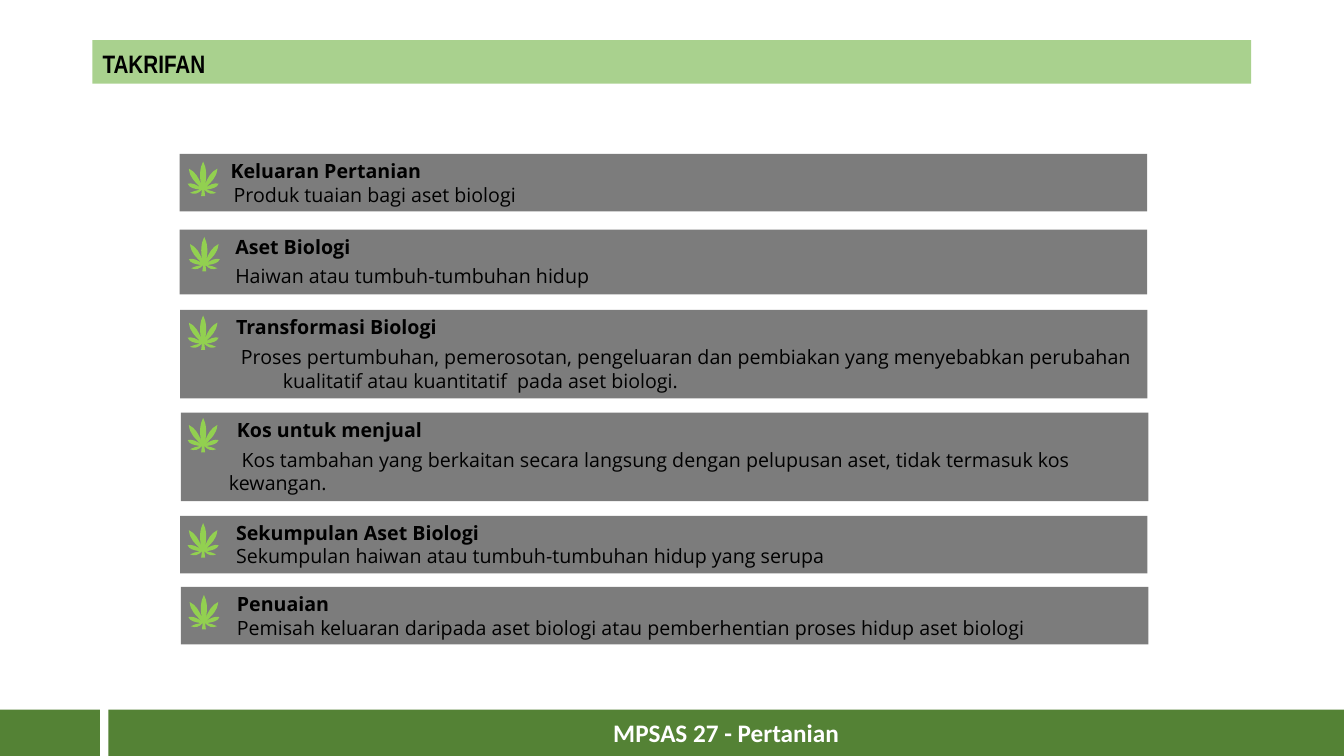
from dataclasses import dataclass

from lxml import etree
from pptx import Presentation
from pptx.dml.color import RGBColor
from pptx.enum.shapes import MSO_SHAPE
from pptx.enum.text import MSO_ANCHOR, MSO_AUTO_SIZE, PP_ALIGN
from pptx.oxml.ns import qn
from pptx.util import Cm, Pt

RECTANGLE = MSO_SHAPE.RECTANGLE
TOP, MIDDLE, BOTTOM = MSO_ANCHOR.TOP, MSO_ANCHOR.MIDDLE, MSO_ANCHOR.BOTTOM
LEFT, CENTER = PP_ALIGN.LEFT, PP_ALIGN.CENTER
NO_AUTOFIT = MSO_AUTO_SIZE.NONE


@dataclass(frozen=True)
class Theme:
    footer: RGBColor = RGBColor(0x54, 0x82, 0x35)
    banner: RGBColor = RGBColor(0xA9, 0xD1, 0x8E)
    bar: RGBColor = RGBColor(0x7C, 0x7C, 0x7C)
    leaf: RGBColor = RGBColor(0x92, 0xD0, 0x50)
    dark: RGBColor = RGBColor(0, 0, 0)
    light: RGBColor = RGBColor(255, 255, 255)
    title_font: str = "Arial Narrow"
    footer_font: str = "Calibri"
    body_font: str = "Open Sans"
    large: Pt = Pt(18)
    normal: Pt = Pt(14)


THEME = Theme()
TITLE = "TAKRIFAN"
FOOTER = "MPSAS 27 - Pertanian"

# term, meaning, (left, top, height), leaf (left, top),
# indents (term, meaning first line, meaning next lines), gap in points
DEFINITIONS = [
    ("Keluaran Pertanian", "Produk tuaian bagi aset biologi",
     (4.53, 3.88, 1.45), (4.73, 4.07), (1.28, 1.36, 1.36), 0),
    ("Aset Biologi", "Haiwan atau tumbuh-tumbuhan hidup",
     (4.53, 5.79, 1.63), (4.76, 5.97), (1.4, 1.4, 1.4), 4),
    ("Transformasi Biologi",
     "Proses pertumbuhan, pemerosotan, pengeluaran dan pembiakan yang "
     "menyebabkan perubahan kualitatif atau kuantitatif  pada aset biologi.",
     (4.54, 7.81, 2.23), (4.73, 7.95), (1.41, 1.53, 2.59), 4.7),
    ("Kos untuk menjual",
     "Kos tambahan yang berkaitan secara langsung dengan pelupusan aset, "
     "tidak termasuk kos kewangan.",
     (4.56, 10.4, 2.23), (4.73, 10.53), (1.41, 1.53, 1.21), 4.7),
    ("Sekumpulan Aset Biologi",
     "Sekumpulan haiwan atau tumbuh-tumbuhan hidup yang serupa",
     (4.54, 13.0, 1.45), (4.73, 13.18), (1.41, 1.41, 1.41), 0),
    ("Penuaian",
     "Pemisah keluaran daripada aset biologi atau pemberhentian proses hidup aset biologi",
     (4.56, 14.79, 1.45), (4.75, 14.99), (1.41, 1.41, 1.41), 0),
]
BAR_WIDTH = 24.38

LEAF_CENTER = 0.39
LEAF_STEM = (0.05, 0.87)
LEAF_HALF = [
    (0, 0),
    (0.08, 0.15), (0.10, 0.36), (0.05, 0.58),
    (0.10, 0.43), (0.20, 0.25), (0.36, 0.18),
    (0.33, 0.43), (0.22, 0.48), (0.04, 0.69),
    (0.14, 0.58), (0.30, 0.53), (0.39, 0.56),
    (0.36, 0.66), (0.22, 0.69), (0.08, 0.71),
    (0.18, 0.74), (0.25, 0.74), (0.33, 0.79),
    (0.22, 0.84), (0.11, 0.81), (0.03, 0.71),
    LEAF_STEM, LEAF_STEM, LEAF_STEM,
]
LEAF_OUTLINE = [(-x, y) for x, y in LEAF_HALF] + [LEAF_STEM] * 2 + LEAF_HALF[::-1]


def paint(shape, color):
    shape.shadow.inherit = False
    shape.fill.solid()
    shape.fill.fore_color.rgb = color
    shape.line.fill.background()


def add_bar(slide, left, top, width, height, color):
    bar = slide.shapes.add_shape(RECTANGLE, Cm(left), Cm(top), Cm(width), Cm(height))
    paint(bar, color)
    return bar


def add_leaf(slide, left, top):
    points = [(Cm(left + LEAF_CENTER + x), Cm(top + y)) for x, y in LEAF_OUTLINE]
    anchors = points[::3]
    builder = slide.shapes.build_freeform(*anchors[0])
    builder.add_line_segments(anchors[1:], close=True)
    leaf = builder.convert_to_shape()
    paint(leaf, THEME.leaf)
    for index, segment in enumerate(list(leaf._element.iter(qn("a:lnTo")))):
        curve = etree.Element(qn("a:cubicBezTo"))
        for x, y in points[3 * index + 1:3 * index + 4]:
            etree.SubElement(curve, qn("a:pt"), x=str(x - leaf.left), y=str(y - leaf.top))
        segment.getparent().replace(segment, curve)


def write(paragraph, text, font, size, color, bold, align=LEFT):
    paragraph.alignment = align
    run = paragraph.add_run()
    run.text = text
    run.font.name = font
    run.font.size = size
    run.font.bold = bold
    run.font.color.rgb = color


def indent(paragraph, first, following):
    properties = paragraph._p.get_or_add_pPr()
    properties.set("marL", str(Cm(following)))
    properties.set("indent", str(Cm(first) - Cm(following)))


def add_definition(slide, term, meaning, place, leaf_place, indents, gap):
    left, top, height = place
    frame = add_bar(slide, left, top, BAR_WIDTH, height, THEME.bar).text_frame
    frame.word_wrap = True
    frame.vertical_anchor = TOP
    frame.margin_left = 0
    term_indent, first, following = indents
    heading = frame.paragraphs[0]
    indent(heading, term_indent, term_indent)
    write(heading, term, THEME.body_font, THEME.normal, THEME.dark, True)
    explanation = frame.add_paragraph()
    indent(explanation, first, following)
    explanation.space_before = Pt(gap)
    write(explanation, meaning, THEME.body_font, THEME.normal, THEME.dark, False)
    add_leaf(slide, *leaf_place)


def add_title(slide):
    title = slide.shapes.title
    title.left, title.top, title.width, title.height = Cm(2.33), Cm(1.01), Cm(29.2), Cm(1.1)
    title.fill.solid()
    title.fill.fore_color.rgb = THEME.banner
    frame = title.text_frame
    frame.auto_size = NO_AUTOFIT
    frame.vertical_anchor = BOTTOM
    frame.paragraphs[0].line_spacing = 0.9
    write(frame.paragraphs[0], TITLE, THEME.title_font, THEME.large, THEME.dark, True)


def add_footer(slide):
    add_bar(slide, 0, 17.88, 2.52, 1.17, THEME.footer)
    frame = add_bar(slide, 2.73, 17.88, 31.14, 1.17, THEME.footer).text_frame
    frame.vertical_anchor = MIDDLE
    write(frame.paragraphs[0], FOOTER, THEME.footer_font, THEME.large, THEME.light, True, CENTER)


def main():
    deck = Presentation()
    deck.slide_width, deck.slide_height = Cm(33.87), Cm(19.05)
    slide = deck.slides.add_slide(deck.slide_layouts[5])
    add_footer(slide)
    add_title(slide)
    for definition in DEFINITIONS:
        add_definition(slide, *definition)
    deck.save("out.pptx")


if __name__ == "__main__":
    main()
